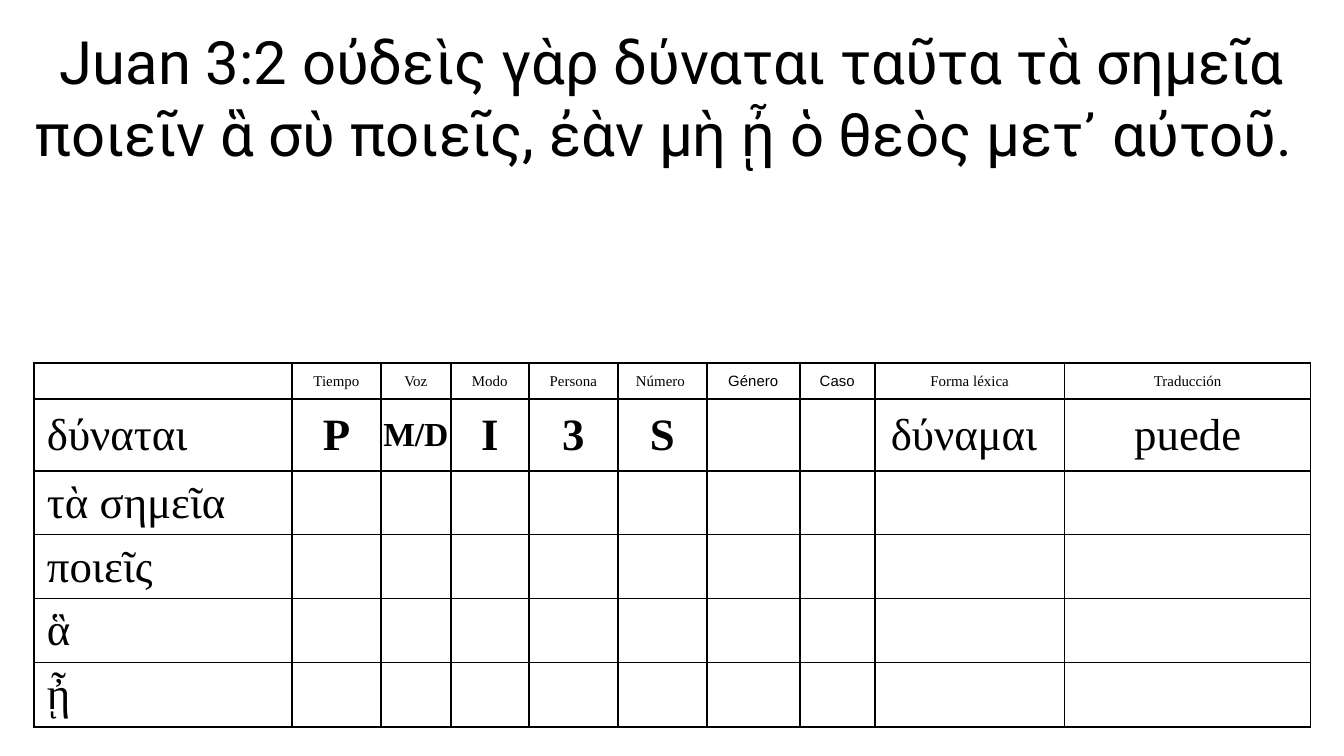
import pptx
import pptx.util
import pptx.dml.color
import pptx.enum.text
import lxml.etree

# Content
VERSE = ("Juan 3:2 οὐδεὶς γὰρ δύναται ταῦτα τὰ σημεῖα "
         "ποιεῖν ἃ σὺ ποιεῖς, ἐὰν μὴ ᾖ ὁ θεὸς μετ᾽ αὐτοῦ. ")
HEADS = ["", "Tiempo", "Voz", "Modo", "Persona", "Número ", "Género",
         "Caso", "Forma léxica", "Traducción"]
FIRST = ["δύναται", "P", "M/D", "I", "3", "S", "", "", "δύναμαι ", "puede"]
WORDS = ["τὰ σημεῖα", "ποιεῖς", "ἃ", "ᾖ"]
ROWS = [HEADS, FIRST] + [[word] + [""] * 9 for word in WORDS]

# Layout in px
WIDE, HIGH = 1344, 756
TITLE = (21, 17, 1303, 159)
LEFT, TOP = 34, 363
COLS = [258, 89, 70, 78, 89, 89, 93, 75, 190, 246]
TALL = [36, 72] + [64] * 4

BLACK = pptx.dml.color.RGBColor(0, 0, 0)
SERIF, SANS = "Times New Roman", "Arial"
ALIGN = pptx.enum.text.PP_ALIGN
MIDDLE = pptx.enum.text.MSO_ANCHOR.MIDDLE
Pt = pptx.util.Pt


def px(num):
    return round(num * 914400 / 134.4)


def style(font, name, size, bold=False):
    font.name, font.size, font.bold = name, Pt(size), bold
    font.color.rgb = BLACK


def border(cell, side, width):
    props = cell._tc.get_or_add_tcPr()
    tag = "{http://schemas.openxmlformats.org/drawingml/2006/main}"
    line = lxml.etree.SubElement(props, tag + side, w=str(Pt(width)))
    fill = lxml.etree.SubElement(line, tag + "solidFill")
    lxml.etree.SubElement(fill, tag + "srgbClr", val=str(BLACK))


def fill_cell(cell, text, row, col):
    # Borders come before the fill in the cell properties
    edges = {"lnL": 1, "lnR": 1,
             "lnT": 1 if row == 0 else 0.75,
             "lnB": 1 if row == len(ROWS) - 1 else 0.75}
    for side, width in edges.items():
        border(cell, side, width)
    cell.fill.background()
    cell.vertical_anchor = MIDDLE
    cell.margin_top = cell.margin_bottom = px(5)
    cell.margin_left = cell.margin_right = px(0 if text == "M/D" else 13)

    para = cell.text_frame.paragraphs[0]
    para.alignment = ALIGN.LEFT if col == 0 else ALIGN.CENTER
    size = 8 if row == 0 else 18 if text == "M/D" else 24
    if not text:
        # An empty cell must not stretch its row
        para._p.get_or_add_endParaRPr().set("sz", "800")
        return
    para.text = text
    name = SANS if text in ("Género", "Caso") else SERIF
    bold = row == 1 and 1 <= col <= 5
    style(para.runs[0].font, name, size, bold)


deck = pptx.Presentation()
deck.slide_width, deck.slide_height = px(WIDE), px(HIGH)
slide = deck.slides.add_slide(deck.slide_layouts[5])

# Verse
title = slide.shapes.title
title.left, title.top, title.width, title.height = map(px, TITLE)
frame = title.text_frame
frame.text = VERSE
frame.word_wrap = True
frame.auto_size = pptx.enum.text.MSO_AUTO_SIZE.SHAPE_TO_FIT_TEXT
frame.vertical_anchor = MIDDLE
frame.paragraphs[0].alignment = ALIGN.CENTER
style(frame.paragraphs[0].runs[0].font, "Roboto", 32)

# Parsing table
table = slide.shapes.add_table(
    len(ROWS), len(COLS), px(LEFT), px(TOP),
    px(sum(COLS)), px(sum(TALL))).table
table.horz_banding = False
table.first_row = False
for col, width in zip(table.columns, COLS):
    col.width = px(width)
for row, height in zip(table.rows, TALL):
    row.height = px(height)
for r, texts in enumerate(ROWS):
    for c, text in enumerate(texts):
        fill_cell(table.cell(r, c), text, r, c)

deck.save("out.pptx")
